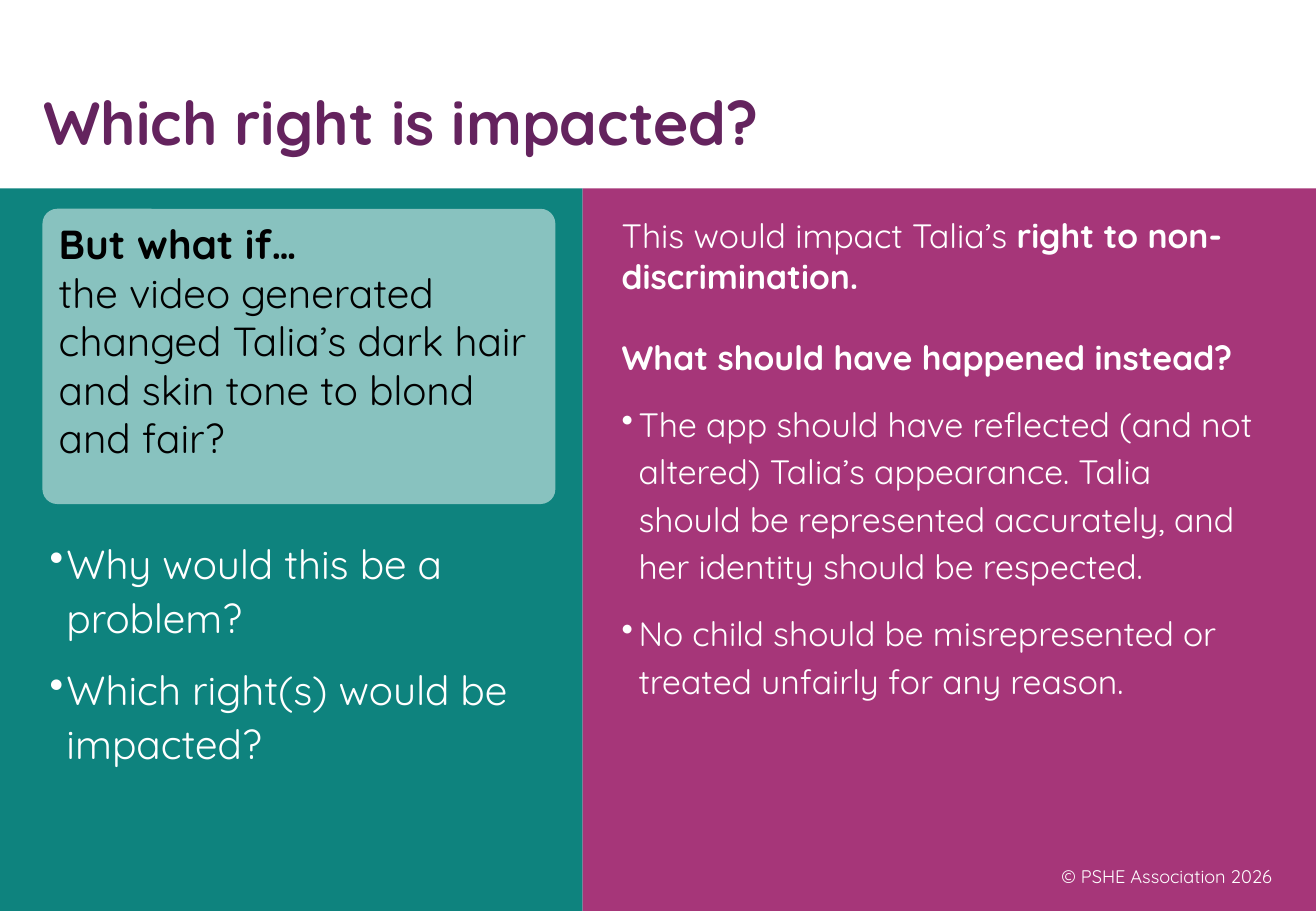
"""Build the slide on which right is impacted."""
from dataclasses import dataclass

from lxml.etree import SubElement
from pptx import Presentation
from pptx.dml.color import RGBColor
from pptx.enum.shapes import MSO_SHAPE
from pptx.enum.text import MSO_ANCHOR, PP_ALIGN
from pptx.oxml.ns import qn
from pptx.util import Pt


@dataclass(frozen=True)
class Theme:
    """Colours, font and type sizes of the slide."""

    font: str = "Quicksand"
    teal: str = "0E837E"
    pale_teal: str = "88C2BF"
    magenta: str = "A63679"
    purple: str = "64235E"
    white: str = "FFFFFF"
    black: str = "000000"
    title: float = 36
    prompt: float = 24
    answer: float = 20
    footer: float = 10.8


THEME = Theme()
WIDTH, HEIGHT = 780, 540
PANEL_TOP, PANEL_SPLIT = 111.6, 345.4
BULLET_INDENT = 10


def set_format(target, values):
    """Set each attribute in values on target."""
    for attribute, value in values.items():
        setattr(target, attribute, value)


def add_panel(slide, box, fill, outline=MSO_SHAPE.RECTANGLE):
    """Add a flat filled shape without line or shadow."""
    panel = slide.shapes.add_shape(outline, *map(Pt, box))
    panel.shadow.inherit = False
    panel.fill.solid()
    panel.fill.fore_color.rgb = RGBColor.from_string(fill)
    panel.line.fill.background()
    return panel


def add_bullet(paragraph):
    """Give a paragraph a bullet with a hanging indent."""
    properties = paragraph._p.get_or_add_pPr()
    properties.set("marL", str(Pt(BULLET_INDENT)))
    properties.set("indent", str(-Pt(BULLET_INDENT)))
    SubElement(properties, qn("a:buChar")).set("char", "•")


def write(frame, paragraphs, size, color, anchor=MSO_ANCHOR.TOP):
    """Write paragraphs of (text, bold) runs, each with its format."""
    set_format(frame, {"word_wrap": True, "vertical_anchor": anchor})
    for index, (runs, values, bulleted) in enumerate(paragraphs):
        paragraph = frame.paragraphs[0] if index == 0 else frame.add_paragraph()
        set_format(paragraph, {"alignment": PP_ALIGN.LEFT, **values})
        if bulleted:
            add_bullet(paragraph)
        for text, bold in runs:
            if text == "\n":
                paragraph.add_line_break()
                continue
            run = paragraph.add_run()
            run.text = text
            set_format(run.font, {"name": THEME.font, "size": Pt(size), "bold": bold})
            run.font.color.rgb = RGBColor.from_string(color)


def add_text(slide, box, paragraphs, size, color, anchor=MSO_ANCHOR.TOP):
    """Add a text box holding the paragraphs."""
    write(slide.shapes.add_textbox(*map(Pt, box)).text_frame, paragraphs, size, color, anchor)


def bullets(texts, line, gap, first_gap=0):
    """Return bulleted paragraphs with fixed line height and gaps between."""
    return [
        ([(text, False)],
         {"line_spacing": Pt(line), "space_before": Pt(gap if index else first_gap)},
         True)
        for index, text in enumerate(texts)
    ]


def add_scenario(slide):
    """Add the rounded card with the changed scenario."""
    card = add_panel(slide, (25.2, 123.8, 304, 175), THEME.pale_teal, MSO_SHAPE.ROUNDED_RECTANGLE)
    card.adjustments[0] = 0.05
    scenario = [
        ("But what if…", True),
        ("\n", False),
        ("the video generated changed Talia’s dark hair and skin tone to blond and fair?", False),
    ]
    write(card.text_frame, [(scenario, {}, False)], THEME.prompt, THEME.black)


def add_answer(slide):
    """Add the impacted right and what should have happened."""
    impact = [("This would impact Talia’s ", False), ("right to non-discrimination.", True)]
    heading = [("What should have happened instead?", True)]
    actions = [
        "The app should have reflected (and not altered) Talia’s appearance. Talia should be "
        "represented accurately, and her identity should be respected.",
        "No child should be misrepresented or treated unfairly for any reason.",
    ]
    paragraphs = [(impact, {}, False), (heading, {"space_before": Pt(24)}, False)]
    paragraphs += bullets(actions, 28, 12, first_gap=12)
    add_text(slide, (361.4, 123.8, 393, 295), paragraphs, THEME.answer, THEME.white)


def main():
    """Build and save the slide."""
    deck = Presentation()
    set_format(deck, {"slide_width": Pt(WIDTH), "slide_height": Pt(HEIGHT)})
    slide = deck.slides.add_slide(deck.slide_layouts[6])

    panel_height = HEIGHT - PANEL_TOP
    add_panel(slide, (0, PANEL_TOP, PANEL_SPLIT, panel_height), THEME.teal)
    add_panel(slide, (PANEL_SPLIT, PANEL_TOP, WIDTH - PANEL_SPLIT, panel_height), THEME.magenta)

    title = [([("Which right is impacted?", True)], {"line_spacing": Pt(43)}, False)]
    add_text(slide, (18.7, 42.5, 610.6, 54.7), title, THEME.title, THEME.purple, MSO_ANCHOR.BOTTOM)

    footer = [([("© PSHE Association 2026", False)], {"alignment": PP_ALIGN.RIGHT}, False)]
    add_text(slide, (585.4, 504.7, 175.7, 28.8), footer, THEME.footer, THEME.white,
             MSO_ANCHOR.MIDDLE)

    questions = ["Why would this be a problem?", "Which right(s) would be impacted?"]
    add_text(slide, (22.3, 312.5, 345.6, 144.7), bullets(questions, 32, 11),
             THEME.prompt, THEME.white)
    add_answer(slide)
    add_scenario(slide)
    deck.save("out.pptx")


if __name__ == "__main__":
    main()
